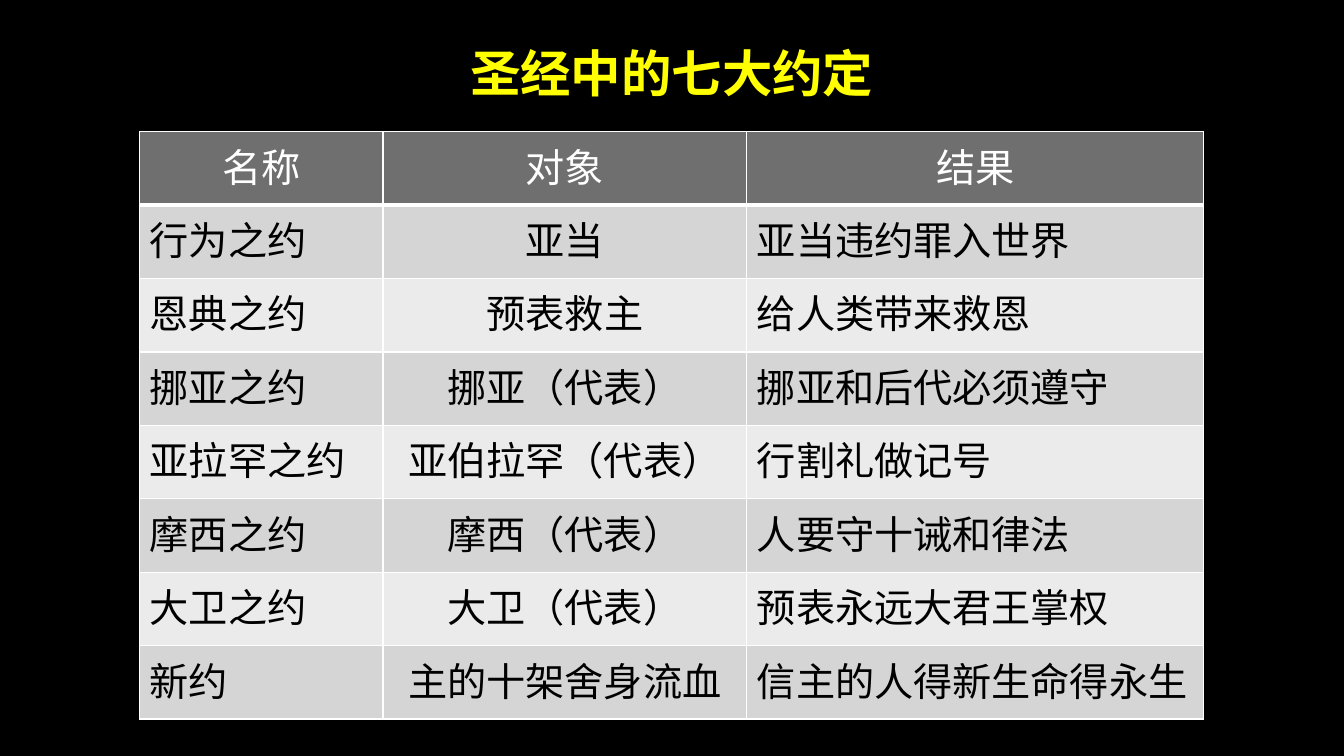
from lxml import etree
from pptx import Presentation
from pptx.dml.color import RGBColor
from pptx.enum.text import PP_ALIGN
from pptx.oxml.ns import qn
from pptx.util import Cm, Pt

LEFT, CENTER = PP_ALIGN.LEFT, PP_ALIGN.CENTER
BLACK = RGBColor(0x00, 0x00, 0x00)
WHITE = RGBColor(0xFF, 0xFF, 0xFF)
YELLOW = RGBColor(0xFF, 0xFF, 0x00)
HEADER_GRAY = RGBColor(0x6F, 0x6F, 0x6F)
BANDS = (RGBColor(0xD5, 0xD5, 0xD5), RGBColor(0xEB, 0xEB, 0xEB))

TITLE_FONT = "Noto Sans CJK JP"
TABLE_FONT = "Arial"
COLUMN_WIDTHS = (6.13, 9.17, 11.51)
ROW_HEIGHT = 1.85
COVENANTS = (
    ("名称", "对象", "结果"),
    ("行为之约", "亚当", "亚当违约罪入世界"),
    ("恩典之约", "预表救主", "给人类带来救恩"),
    ("挪亚之约", "挪亚（代表）", "挪亚和后代必须遵守"),
    ("亚拉罕之约", "亚伯拉罕（代表）", "行割礼做记号"),
    ("摩西之约", "摩西（代表）", "人要守十诫和律法"),
    ("大卫之约", "大卫（代表）", "预表永远大君王掌权"),
    ("新约", "主的十架舍身流血", "信主的人得新生命得永生"),
)


def write_text(tf, text, font, size, color, align, bold=False):
    p = tf.paragraphs[0]
    p.text = text
    p.alignment = align
    p.font.name = font
    p.font.size = Pt(size)
    p.font.bold = bold
    p.font.color.rgb = color
    latin = p.font._element.find(qn("a:latin"))
    east_asian = etree.Element(qn("a:ea"), typeface=TITLE_FONT)
    latin.addnext(east_asian)


def set_borders(cell, bottom_width):
    tcPr = cell._tc.get_or_add_tcPr()
    widths = {"a:lnL": 1, "a:lnR": 1, "a:lnT": 1, "a:lnB": bottom_width}
    for index, (tag, width) in enumerate(widths.items()):
        ln = etree.Element(qn(tag), w=str(Pt(width)))
        fill = etree.SubElement(ln, qn("a:solidFill"))
        etree.SubElement(fill, qn("a:srgbClr"), val=str(WHITE))
        tcPr.insert(index, ln)


def add_title(slide, text):
    box = slide.shapes.add_textbox(Cm(7.14), Cm(0.94), Cm(19.58), Cm(1.8))
    tf = box.text_frame
    tf.word_wrap = True
    write_text(tf, text, TITLE_FONT, 36, YELLOW, CENTER, bold=True)


def add_covenant_table(slide, rows):
    frame = slide.shapes.add_table(
        len(rows), len(COLUMN_WIDTHS), Cm(3.52), Cm(3.32),
        Cm(sum(COLUMN_WIDTHS)), Cm(ROW_HEIGHT * len(rows)))
    table = frame.table
    for column, width in zip(table.columns, COLUMN_WIDTHS):
        column.width = Cm(width)
    for i, row in enumerate(rows):
        is_header = i == 0
        table.rows[i].height = Cm(ROW_HEIGHT)
        for j, text in enumerate(row):
            cell = table.cell(i, j)
            cell.fill.solid()
            cell.fill.fore_color.rgb = HEADER_GRAY if is_header else BANDS[(i - 1) % 2]
            set_borders(cell, 3 if is_header else 1)
            write_text(cell.text_frame, text, TABLE_FONT, 28,
                       WHITE if is_header else BLACK,
                       CENTER if is_header or j == 1 else LEFT)


def main():
    prs = Presentation()
    prs.slide_width, prs.slide_height = Cm(33.87), Cm(19.05)
    slide = prs.slides.add_slide(prs.slide_layouts[6])
    slide.background.fill.solid()
    slide.background.fill.fore_color.rgb = BLACK
    add_title(slide, "圣经中的七大约定")
    add_covenant_table(slide, COVENANTS)
    prs.save("out.pptx")


if __name__ == "__main__":
    main()
